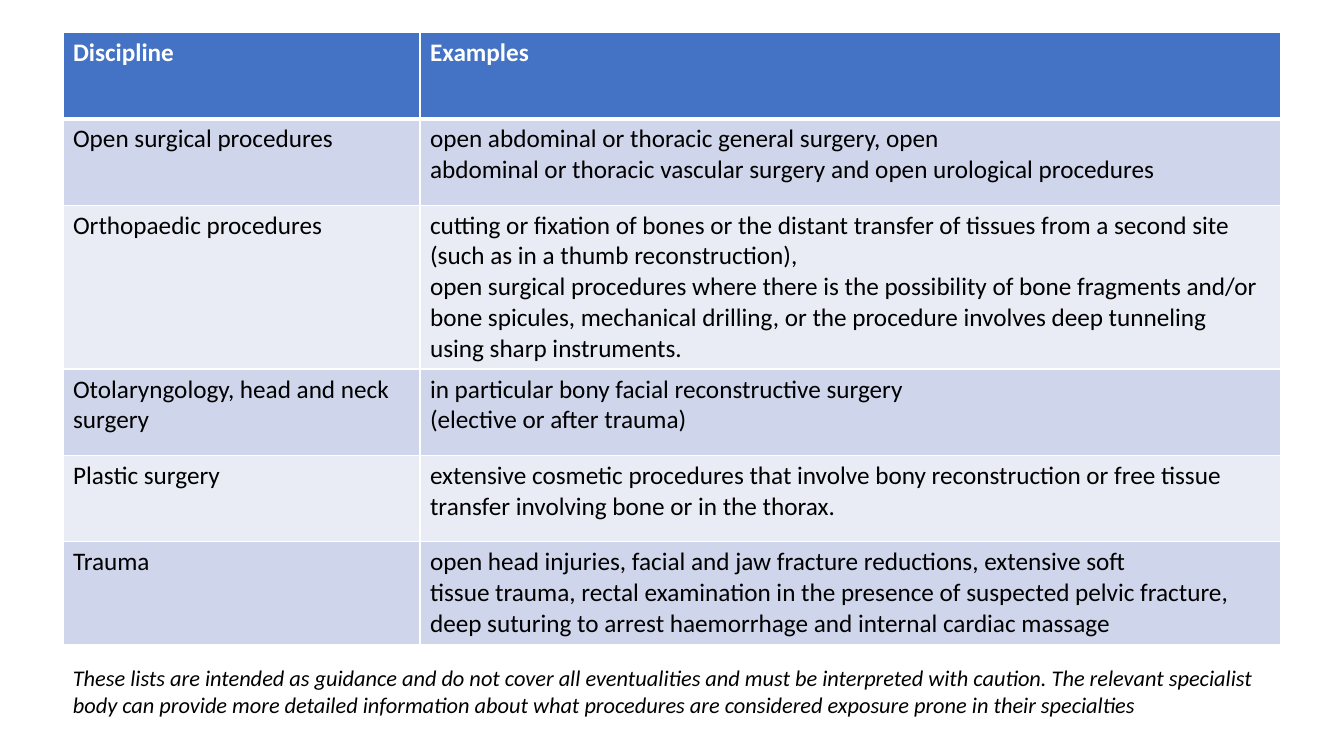
from dataclasses import dataclass

import pptx
import pptx.dml.color
import pptx.enum.text
import pptx.oxml
import pptx.oxml.ns
import pptx.util


@dataclass(frozen=True)
class Theme:
    """Colours, font and type sizes of the slide."""
    font: str = "Calibri"
    header: str = "4472C4"
    bands: tuple = ("CFD5EA", "E9EBF5")
    light: str = "FFFFFF"
    dark: str = "000000"
    body_size: int = 18
    note_size: int = 16
    rule: float = 1
    header_rule: float = 3


class Page:
    """A slide with a 64 by 70 grid and one theme."""

    def __init__(self, deck, theme):
        """Add a blank slide to the deck."""
        self.theme = theme
        self.slide = deck.slides.add_slide(deck.slide_layouts[6])
        self.column = deck.slide_width / 64
        self.row = deck.slide_height / 70

    def place(self, left, top, width, height):
        """Turn grid units into slide lengths."""
        return (round(left * self.column), round(top * self.row),
                round(width * self.column), round(height * self.row))

    def add_wording(self, frame, paragraphs, size, color, bold=False, italic=False):
        """Fill a text frame with one run per paragraph."""
        for index, wording in enumerate(paragraphs):
            paragraph = frame.add_paragraph() if index else frame.paragraphs[0]
            run = paragraph.add_run()
            run.text = wording
            run.font.name = self.theme.font
            run.font.size = pptx.util.Pt(size)
            run.font.bold = bold
            run.font.italic = italic
            run.font.color.rgb = pptx.dml.color.RGBColor.from_string(color)

    def rule_cell(self, cell, widths):
        """Draw the left, right, top and bottom borders of a cell."""
        properties = cell._tc.get_or_add_tcPr()
        for index, (side, width) in enumerate(zip("LRTB", widths)):
            properties.insert(index, pptx.oxml.parse_xml(
                f'<a:ln{side} {pptx.oxml.ns.nsdecls("a")} w="{pptx.util.Pt(width)}">'
                f'<a:solidFill><a:srgbClr val="{self.theme.light}"/></a:solidFill>'
                f'</a:ln{side}>'))

    def table(self, entries, left, top, column_spans, row_span):
        """Add a banded table whose first entry is the header."""
        theme = self.theme
        area = self.place(left, top, sum(column_spans), row_span * len(entries))
        table = self.slide.shapes.add_table(len(entries), len(column_spans), *area).table
        for column, span in zip(table.columns, column_spans):
            column.width = round(span * self.column)
        for index, entry in enumerate(entries):
            header = index == 0
            fill = theme.header if header else theme.bands[(index - 1) % 2]
            above = theme.header_rule if index == 1 else theme.rule
            below = theme.header_rule if header else theme.rule
            for cell, paragraphs in zip(table.rows[index].cells, entry):
                cell.fill.solid()
                cell.fill.fore_color.rgb = pptx.dml.color.RGBColor.from_string(fill)
                self.rule_cell(cell, (theme.rule, theme.rule, above, below))
                self.add_wording(cell.text_frame, paragraphs, theme.body_size,
                                 theme.light if header else theme.dark, bold=header)

    def note(self, wording, left, top, width, height):
        """Add an italic note that wraps in its box."""
        box = self.slide.shapes.add_textbox(*self.place(left, top, width, height))
        box.text_frame.word_wrap = True
        box.text_frame.auto_size = pptx.enum.text.MSO_AUTO_SIZE.SHAPE_TO_FIT_TEXT
        self.add_wording(box.text_frame, [wording], self.theme.note_size,
                         self.theme.dark, italic=True)


DISCIPLINES = [
    (["Discipline"], ["Examples"]),
    (["Open surgical procedures"],
     ["open abdominal or thoracic general surgery, open",
      "abdominal or thoracic vascular surgery and open urological procedures"]),
    (["Orthopaedic procedures"],
     ["cutting or fixation of bones or the distant transfer of tissues from a second site "
      "(such as in a thumb reconstruction),",
      "open surgical procedures where there is the possibility of bone fragments and/or",
      "bone spicules, mechanical drilling, or the procedure involves deep tunneling",
      "using sharp instruments."]),
    (["Otolaryngology, head and neck surgery"],
     ["in particular bony facial reconstructive surgery",
      "(elective or after trauma)"]),
    (["Plastic surgery"],
     ["extensive cosmetic procedures that involve bony reconstruction or free tissue "
      "transfer involving bone or in the thorax."]),
    (["Trauma"],
     ["open head injuries, facial and jaw fracture reductions, extensive soft",
      "tissue trauma, rectal examination in the presence of suspected pelvic fracture, "
      "deep suturing to arrest haemorrhage and internal cardiac massage"]),
]
GUIDANCE = (
    "These lists are intended as guidance and do not cover all eventualities and must be "
    "interpreted with caution. The relevant specialist body can provide more detailed "
    "information about what procedures are considered exposure prone in their specialties")


def main():
    """Build and save the slide."""
    deck = pptx.Presentation()
    deck.slide_width = pptx.util.Inches(13.33)
    deck.slide_height = pptx.util.Inches(7.5)
    page = Page(deck, Theme())
    page.table(DISCIPLINES, left=3, top=3, column_spans=(17, 41), row_span=8)
    page.note(GUIDANCE, left=3, top=61, width=58, height=6)
    deck.save("out.pptx")


if __name__ == "__main__":
    main()
